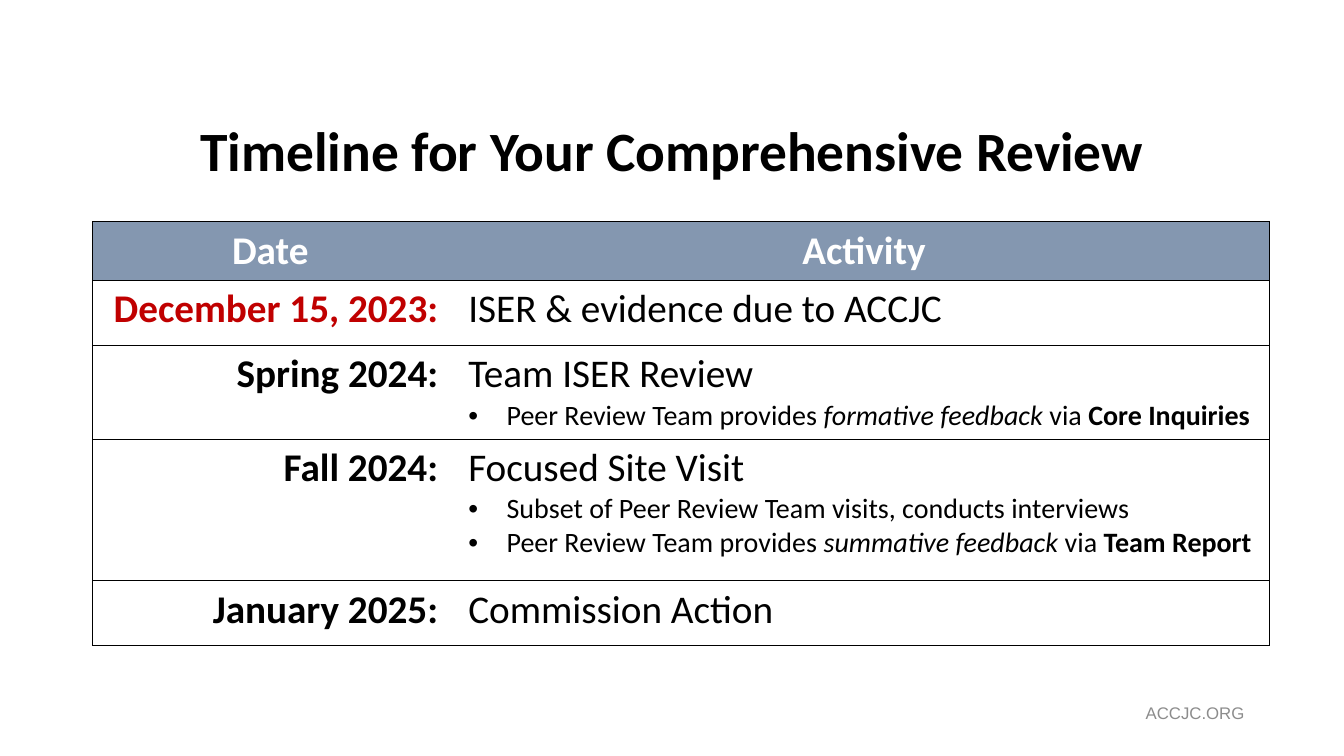
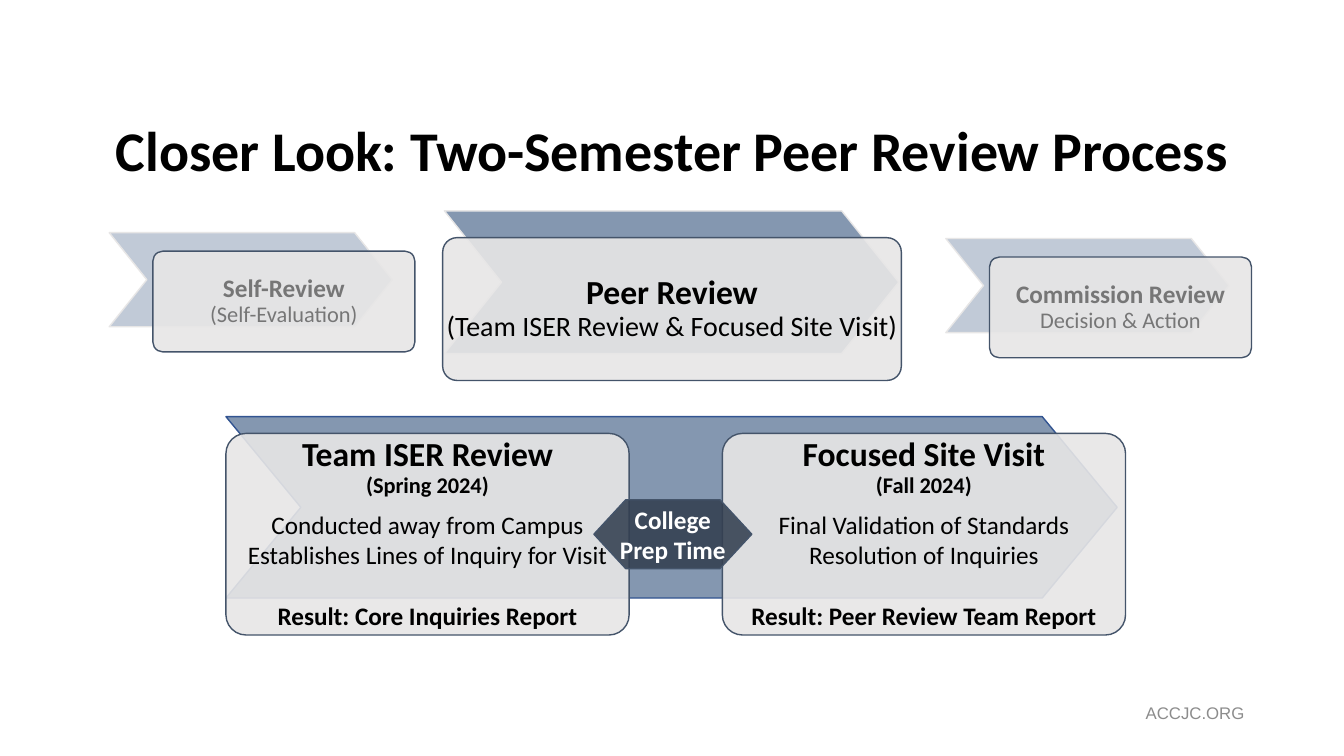
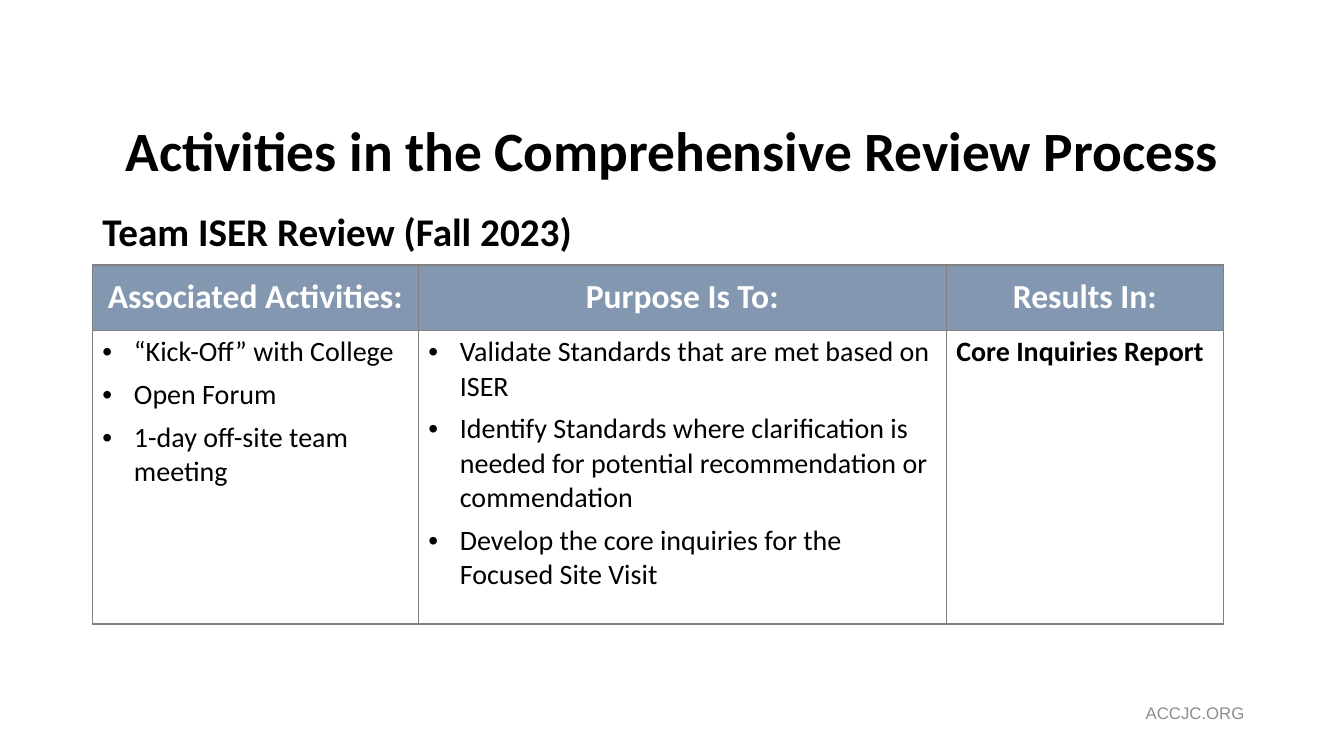
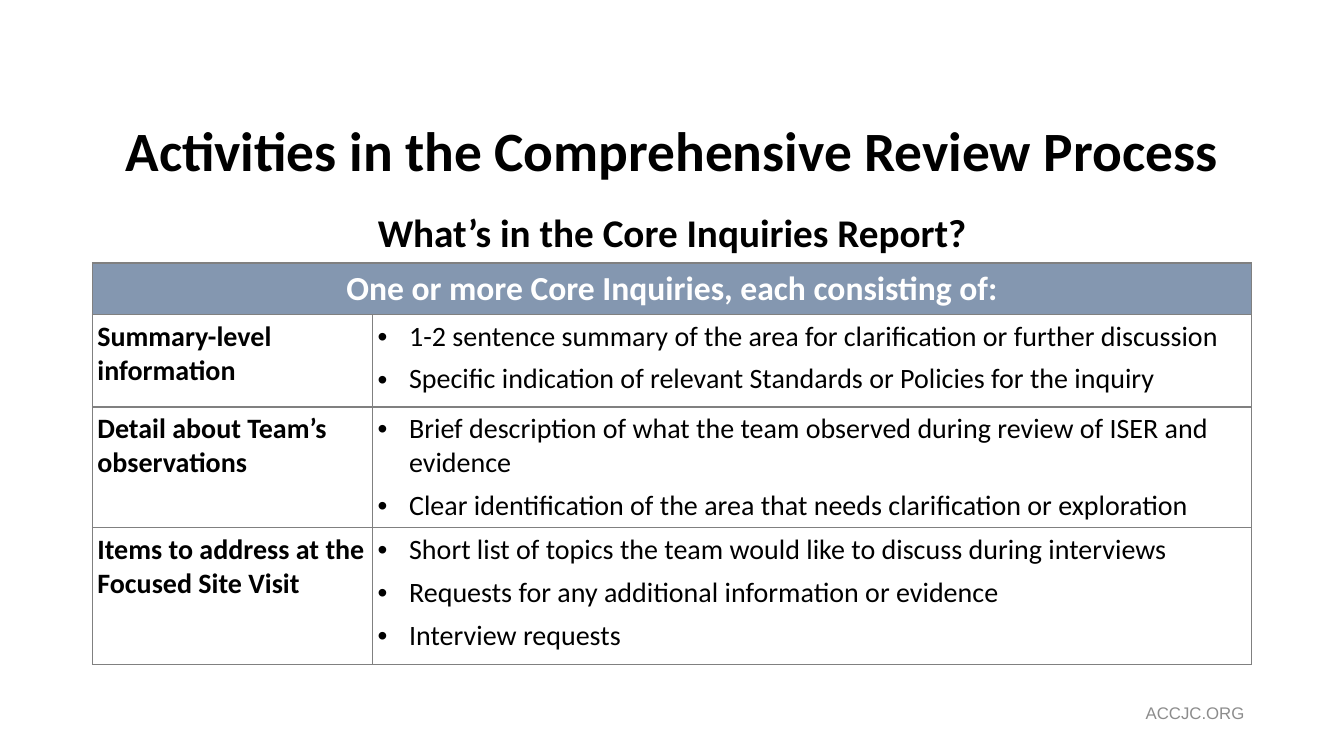
from lxml.etree import SubElement
from pptx import Presentation
from pptx.dml.color import RGBColor
from pptx.enum.shapes import MSO_SHAPE
from pptx.enum.text import MSO_ANCHOR, MSO_AUTO_SIZE, PP_ALIGN
from pptx.oxml.ns import qn
from pptx.util import Inches, Pt

COLOURS = {
    "black": "000000", "white": "FFFFFF", "slate": "8497B0", "pale": "E7E6E6",
    "ink": "44546A", "navy": "333F50", "royal": "325491", "red": "C00000",
    "rule": "808080", "footer": "8C8C8C",
}
ALIGN = {"l": PP_ALIGN.LEFT, "c": PP_ALIGN.CENTER, "r": PP_ALIGN.RIGHT}
ANCHOR = {"t": MSO_ANCHOR.TOP, "m": MSO_ANCHOR.MIDDLE, "b": MSO_ANCHOR.BOTTOM}
NO_TABLE_STYLE = "{2D5ABB26-0587-4C30-8999-92F81FD0307C}"
LEFT, WIDTH = 11, 138  # content margin and width, in grid columns


def u(n):
    """Grid units to EMU: 160 columns by 90 rows, 12 to the inch."""
    return Inches(n / 12)


def para(*runs, **fmt):
    """A paragraph: runs are strings or (string, format) pairs."""
    return runs, fmt


def cell(*paras, **look):
    """A table cell: its paragraphs and its look."""
    return paras, look


class Deck:
    font = "Calibri"

    def __init__(self):
        self.prs = Presentation()
        self.prs.slide_width, self.prs.slide_height = u(160), u(90)

    # Shared formatting
    def paint(self, fill, colour, alpha=100):
        fill.solid()
        fill.fore_color.rgb = RGBColor.from_string(COLOURS[colour])
        if alpha < 100:
            clr = fill._xPr.find(qn("a:solidFill"))[0]
            SubElement(clr, qn("a:alpha"), val=str(alpha * 1000))

    def frame(self, box, anchor="t", margins=None):
        """Set anchor and margins (left, top, right, bottom) of a frame or cell."""
        box.vertical_anchor = ANCHOR[anchor]
        if margins:
            for side, n in zip(("left", "top", "right", "bottom"), margins):
                setattr(box, "margin_" + side, u(n))

    def put_text(self, tf, paras, **base):
        for i, (runs, own) in enumerate(paras):
            p = tf.paragraphs[0] if i == 0 else tf.add_paragraph()
            fmt = {"font": self.font, "size": 20, "colour": "black", "alpha": 100,
                   **base, **own}
            if "bullet" in fmt:
                pPr = p._p.get_or_add_pPr()
                pPr.set("marL", str(u(fmt["bullet"])))
                pPr.set("indent", str(-u(fmt["bullet"])))
                SubElement(pPr, qn("a:buFont"), typeface="Arial")
                SubElement(pPr, qn("a:buChar"), char="•")
            p.alignment = ALIGN[fmt.get("align", "l")]
            for name in ("line_spacing", "space_before", "space_after"):
                if name in fmt:
                    n = fmt[name]
                    setattr(p, name, n if name == "line_spacing" else Pt(n))
            for run in runs:
                text, extra = (run, {}) if isinstance(run, str) else run
                look = {**fmt, **extra}
                for j, line in enumerate(text.split("\n")):
                    if j:
                        p.add_line_break()
                    if not line:
                        continue
                    r = p.add_run()
                    r.text = line
                    for name, value in {"name": look["font"], "size": Pt(look["size"]),
                                        "bold": look.get("bold", False),
                                        "italic": look.get("italic", False)}.items():
                        setattr(r.font, name, value)
                    self.paint(r.font.fill, look["colour"], look["alpha"])

    # Slide with title and footer
    def slide(self, title, size=39.6):
        self.s = self.prs.slides.add_slide(self.prs.slide_layouts[5])
        sp = self.s.shapes.title
        for name, n in zip(("left", "top", "width", "height"), (LEFT, 14.4, WIDTH, 7.8)):
            setattr(sp, name, u(n))
        tf = sp.text_frame
        tf.word_wrap, tf.auto_size = True, MSO_AUTO_SIZE.NONE
        self.frame(tf, "m", (1.2, 0.6, 1.2, 0.6))
        self.put_text(tf, [para(title)], size=size, bold=True, align="c",
                      line_spacing=0.9)
        tf = self.s.shapes.add_textbox(*map(u, (127.3, 83.4, 21.7, 3))).text_frame
        tf.word_wrap = True
        self.frame(tf, "m", (0.84, 0.5, 0.84, 0.5))
        self.put_text(tf, [para("ACCJC.ORG")], font="Arial", size=12,
                      colour="footer", align="r")

    # Preset shape, with optional text
    def shape(self, kind, at, fill, line, alpha=100, adj=None, paras=(), wrap=False, **fmt):
        sp = self.s.shapes.add_shape(kind, *map(u, at))
        sp.shadow.inherit = False
        if adj is not None:
            sp.adjustments[0] = adj
        self.paint(sp.fill, fill, alpha)
        self.paint(sp.line.fill, line)
        sp.line.width = Pt(1)
        if paras:
            sp.text_frame.word_wrap = wrap
            self.frame(sp.text_frame, "m", (0, 3, 0, 3))
            self.put_text(sp.text_frame, paras, align="c", **fmt)

    def chevron(self, at, line="pale", alpha=100, adj=0.4):
        self.shape(MSO_SHAPE.CHEVRON, at, "slate", line, alpha, adj)

    def card(self, at, *paras, **fmt):
        self.shape(MSO_SHAPE.ROUNDED_RECTANGLE, at, "pale", "ink", 90, 0.1, paras, **fmt)

    # Table; a row with a single cell spans all columns
    def table(self, top, cols, heights, rows, edge, weight):
        at = map(u, (LEFT, top, sum(cols), sum(heights)))
        table = self.s.shapes.add_table(len(heights), len(cols), *at).table
        table._tbl.tblPr.find(qn("a:tableStyleId")).text = NO_TABLE_STYLE
        for column, n in zip(table.columns, cols):
            column.width = u(n)
        for i, (n, row) in enumerate(zip(heights, rows)):
            table.rows[i].height = u(n)
            if len(row) == 1:
                table.cell(i, 0).merge(table.cell(i, len(cols) - 1))
            for j in range(len(cols)):
                paras, look = row[min(j, len(row) - 1)]
                c = table.cell(i, j)
                self.borders(c, look.get("sides", "LRTB"), edge, weight)
                if "fill" in look:
                    self.paint(c.fill, look["fill"])
                else:
                    c.fill.background()
                if j < len(row):
                    self.frame(c, look.get("anchor", "t"), look.get("margins"))
                    self.put_text(c.text_frame, paras)

    def borders(self, c, sides, colour, weight):
        tcPr = c._tc.get_or_add_tcPr()
        for side in "LRTB":
            ln = SubElement(tcPr, qn("a:ln" + side), w=str(Pt(weight)))
            if side in sides:
                fill = SubElement(ln, qn("a:solidFill"))
                SubElement(fill, qn("a:srgbClr"), val=COLOURS[colour])
            else:
                SubElement(ln, qn("a:noFill"))


BOLD, ITALIC = {"bold": True}, {"italic": True}


def bullets(*texts):
    return [para(t, bullet=3.75, space_after=6) for t in texts]


def timeline(d):
    d.slide("Timeline for Your Comprehensive Review")
    indent = (2.4, 0.6, 1.2, 0.6)
    head = {"size": 28, "bold": True, "colour": "white", "align": "c"}

    def step(date, activity, *details, colour="black"):
        return [cell(para(date, size=28, bold=True, align="r", colour=colour), sides="LTB"),
                cell(para(activity, size=28), *[para(*runs, bullet=4.56) for runs in details],
                     sides="RTB", margins=indent)]

    provides = "Peer Review Team provides "
    d.table(26.4, (42.36, 97.8), (7, 7.75, 11.1, 16.9, 7.7), [
        [cell(para("Date", **head), fill="slate", sides="LTB"),
         cell(para("Activity", **head), fill="slate", sides="RTB", margins=indent)],
        step("December 15, 2023:", "ISER & evidence due to ACCJC", colour="red"),
        step("Spring 2024:", "Team ISER Review",
             (provides, ("formative feedback", ITALIC), " via ", ("Core Inquiries", BOLD))),
        step("Fall 2024:", "Focused Site Visit",
             ("Subset of Peer Review Team visits, conducts interviews",),
             (provides, ("summative feedback ", ITALIC), "via ", ("Team Report", BOLD))),
        step("January 2025:", "Commission Action"),
    ], "black", 0.5)


def process(d):
    d.slide("Closer Look: Two-Semester Peer Review Process", size=40)

    # Two semesters
    d.chevron((26.9, 49.6, 106.1, 21.6), line="royal", adj=0.413)
    semesters = [
        (26.9, "Team ISER Review", "(Spring 2024)", "Conducted away from Campus",
         "Establishes Lines of Inquiry for Visit", "Result: Core Inquiries Report"),
        (86, "Focused Site Visit", "(Fall 2024)", "Final Validation of Standards",
         "Resolution of Inquiries", "Result: Peer Review Team Report"),
    ]
    for x, name, term, first, second, result in semesters:
        d.card((x, 51.6, 48, 24),
               para((name + "\n", {"size": 24}), term, size=16, bold=True,
                    line_spacing=0.9, space_after=8),
               para(first), para(second),
               para(result, bold=True, space_before=22), size=18)

    # Three stages: chevron, card, alpha of chevron and text, sizes, words
    side, side_card = (33.7, 11.2), (31.2, 12)
    stages = [
        ((13, 27.7, *side), (18.2, 29.9, *side_card), 50, 47, 18, 16,
         "Self-Review", "(Self-Evaluation)"),
        ((52.9, 25.1, 54.1, 17), (52.7, 28.3, 54.6, 17), 100, 100, 24, 20,
         "Peer Review", "(Team ISER Review & Focused Site Visit)"),
        ((112.6, 28.4, *side), (117.8, 30.6, *side_card), 50, 47, 18, 16,
         "Commission Review", "Decision & Action"),
    ]
    for arrow, card, tint, text_tint, big, small, name, note in stages:
        d.chevron(arrow, alpha=tint)
        d.card(card, para((name + "\n", {"size": big, "bold": True}), note,
                          size=small, line_spacing=0.9, alpha=text_tint))

    # Time between the semesters
    d.shape(MSO_SHAPE.HEXAGON, (70.7, 59.5, 18.8, 8.2), "navy", "ink", 88, 0.462,
            [para("College Prep Time")], wrap=True, size=18, bold=True, colour="white")


def activities(d):
    d.slide("Activities in the Comprehensive Review Process")
    heads = ("Associated Activities:", "Purpose Is To:", "Results In:")
    d.table(24, (38.8, 62.85, 33), (7.55, 7.75, 35), [
        [cell(para("Team ISER Review (Fall 2023)", size=28, bold=True),
              anchor="m", sides="B")],
        [cell(para(h, size=24, bold=True, colour="white", align="c"),
              anchor="m", fill="slate") for h in heads],
        [cell(*bullets("“Kick-Off” with College", "Open Forum",
                       "1-day off-site team meeting")),
         cell(*bullets("Validate Standards that are met based on ISER",
                       "Identify Standards where clarification is needed for "
                       "potential recommendation or commendation",
                       "Develop the core inquiries for the Focused Site Visit")),
         cell(para("Core Inquiries Report", bold=True))],
    ], "rule", 1)


def report(d):
    d.slide("Activities in the Comprehensive Review Process")
    head = {"bold": True, "align": "c", "space_after": 2}
    tight = (0.6, 0.6, 0.24, 0.6)

    def item(name, *details):
        return [cell(para(name, bold=True), margins=tight),
                cell(*bullets(*details), margins=tight)]

    d.table(23.2, (33.36, 104.64), (8.1, 6.15, 11, 14.4, 16.3), [
        [cell(para("What’s in the Core Inquiries Report?", size=28, **head),
              anchor="b", fill="white", sides="B")],
        [cell(para("One or more Core Inquiries, each consisting of:", size=24,
                   colour="white", **head), anchor="b", fill="slate")],
        item("Summary-level information",
             "1-2 sentence summary of the area for clarification or further discussion",
             "Specific indication of relevant Standards or Policies for the inquiry"),
        item("Detail about Team’s observations",
             "Brief description of what the team observed during review of ISER and evidence",
             "Clear identification of the area that needs clarification or exploration"),
        item("Items to address at the Focused Site Visit",
             "Short list of topics the team would like to discuss during interviews",
             "Requests for any additional information or evidence",
             "Interview requests"),
    ], "rule", 1)


def main():
    d = Deck()
    for build in (timeline, process, activities, report):
        build(d)
    d.prs.save("out.pptx")


if __name__ == "__main__":
    main()
